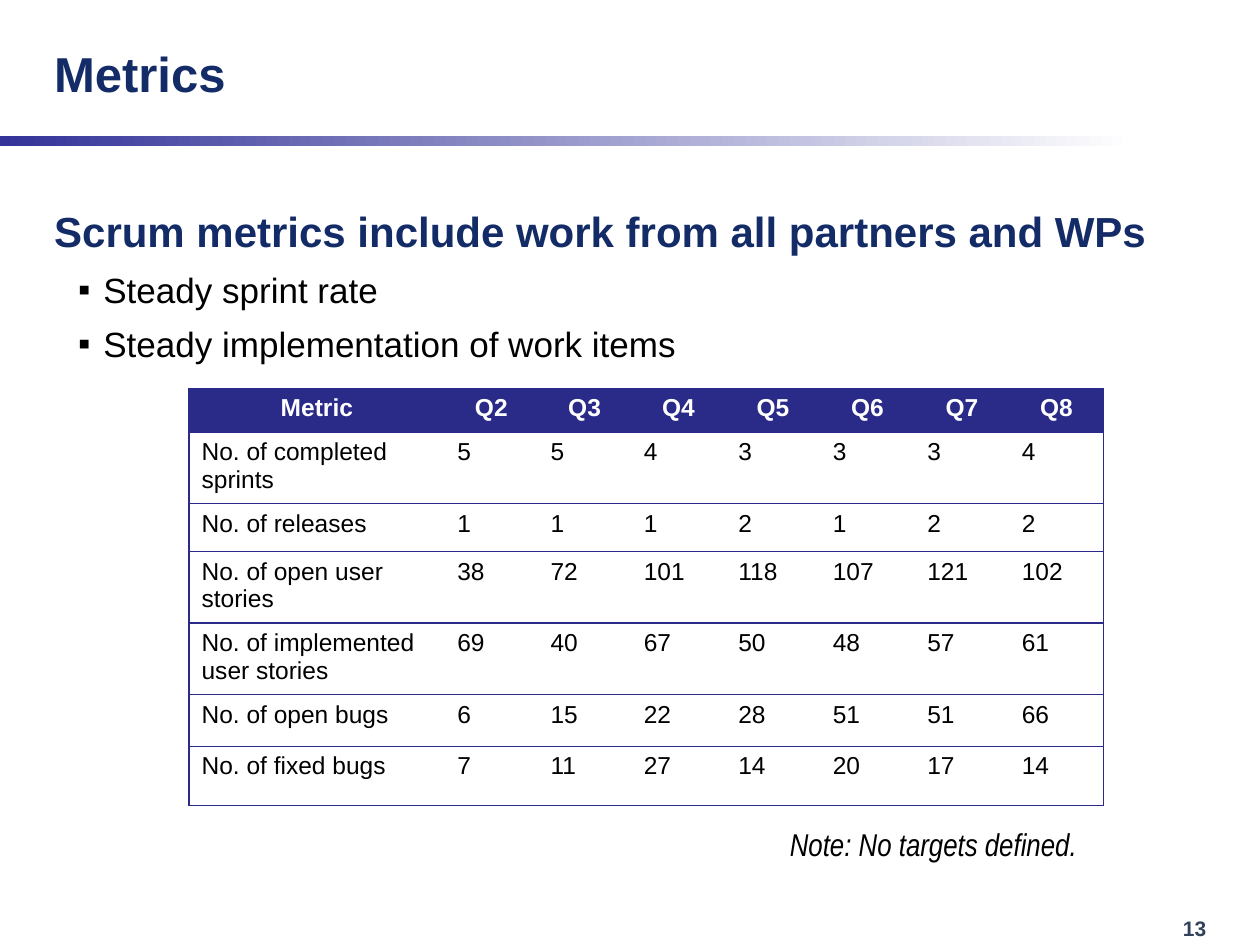
from pptx import Presentation
from pptx.dml.color import RGBColor
from pptx.enum.shapes import MSO_SHAPE as Shape
from pptx.enum.text import MSO_ANCHOR as Anchor, MSO_AUTO_SIZE as AutoSize, PP_ALIGN as Align
from pptx.oxml import parse_xml
from pptx.oxml.ns import nsdecls
from pptx.util import Inches, Pt

NAVY, INDIGO, BLACK, WHITE = "132B66", "2A2A89", "000000", "FFFFFF"
PLAIN_TABLE_STYLE = "{2D5ABB26-0587-4C30-8999-92F81FD0307C}"

HEADER = ["Metric", "Q2", "Q3", "Q4", "Q5", "Q6", "Q7", "Q8"]
METRICS = [
    ("No. of completed sprints", 5, 5, 4, 3, 3, 3, 4),
    ("No. of releases", 1, 1, 1, 2, 1, 2, 2),
    ("No. of open user stories", 38, 72, 101, 118, 107, 121, 102),
    ("No. of implemented user stories", 69, 40, 67, 50, 48, 57, 61),
    ("No. of open bugs", 6, 15, 22, 28, 51, 51, 66),
    ("No. of fixed bugs", 7, 11, 27, 14, 20, 17, 14),
]
COLUMN_WIDTHS = [2.03, 0.74, 0.74] + [0.75] * 5
ROW_HEIGHTS = [0.35, 0.41, 0.38, 0.44, 0.41, 0.41, 0.47]


def color(hex_string):
    return RGBColor.from_string(hex_string)


def box(left, top, width, height):
    return [Inches(value) for value in (left, top, width, height)]


class SlideBuilder:
    def __init__(self, slide, font="Arial"):
        self.slide = slide
        self.font = font

    def format_paragraph(self, paragraph, size, hex_string, bold=False, italic=False, font=None):
        for run in paragraph.runs:
            run.font.name = font or self.font
            run.font.size = Pt(size)
            run.font.bold = bold
            run.font.italic = italic
            run.font.color.rgb = color(hex_string)

    def place(self, shape, position):
        shape.left, shape.top, shape.width, shape.height = box(*position)
        shape.text_frame.auto_size = AutoSize.NONE

    def title(self, text, position):
        shape = self.slide.shapes.title
        self.place(shape, position)
        shape.text_frame.text = text
        shape.text_frame.vertical_anchor = Anchor.MIDDLE
        paragraph = shape.text_frame.paragraphs[0]
        paragraph.alignment = Align.LEFT
        self.format_paragraph(paragraph, 28, NAVY, bold=True)

    def body(self, heading, items, position):
        shape = self.slide.placeholders[1]
        self.place(shape, position)
        frame = shape.text_frame
        frame.text = "\n".join([heading, *items])
        first, *rest = frame.paragraphs
        self.bullet(first, 0.38, -0.38)
        first.space_before = Pt(0)
        self.format_paragraph(first, 24, NAVY, bold=True)
        for paragraph in rest:
            paragraph.level = 1
            self.bullet(paragraph, 0.39, -0.2, "▪")
            paragraph.space_before = Pt(7)
            self.format_paragraph(paragraph, 20, BLACK)

    def bullet(self, paragraph, margin, indent, character=None):
        properties = paragraph._p.get_or_add_pPr()
        properties.set("marL", str(Inches(margin)))
        properties.set("indent", str(Inches(indent)))
        tag = f'buChar char="{character}"' if character else "buNone"
        name = tag.split()[0]
        properties.append(parse_xml(f'<a:{tag} {nsdecls("a")}></a:{name}>'))

    def gradient_bar(self, position, start, end):
        shape = self.slide.shapes.add_shape(Shape.RECTANGLE, *box(*position))
        shape.shadow.inherit = False
        shape.line.fill.background()
        shape.fill.gradient()
        shape.fill.gradient_angle = 0
        for stop, (offset, hex_string) in zip(shape.fill.gradient_stops, (start, end)):
            stop.position = offset
            stop.color.rgb = color(hex_string)

    def text(self, text, position, size, hex_string, **style):
        shape = self.slide.shapes.add_textbox(*box(*position))
        shape.text_frame.word_wrap = True
        shape.text_frame.text = text
        self.format_paragraph(shape.text_frame.paragraphs[0], size, hex_string, **style)

    def table(self, rows, position, widths, heights):
        frame = self.slide.shapes.add_table(len(rows), len(widths), *box(*position))
        table = frame.table
        table.horz_banding = False
        table._tbl.tblPr.find("{*}tableStyleId").text = PLAIN_TABLE_STYLE
        for column, width in zip(table.columns, widths):
            column.width = Inches(width)
        for row, height in zip(table.rows, heights):
            row.height = Inches(height)
        for row_index, values in enumerate(rows):
            for column_index, value in enumerate(values):
                sides = ["T", "B"]
                if column_index == 0:
                    sides.insert(0, "L")
                if column_index == len(widths) - 1:
                    sides.insert(0, "R")
                self.cell(table.cell(row_index, column_index), value, row_index == 0, sides)

    def cell(self, cell, value, is_header, sides):
        cell.text_frame.text = str(value)
        paragraph = cell.text_frame.paragraphs[0]
        paragraph.alignment = Align.CENTER if is_header else Align.LEFT
        self.format_paragraph(paragraph, 14, WHITE if is_header else BLACK, bold=is_header)
        properties = cell._tc.get_or_add_tcPr()
        for side in sides:
            properties.append(parse_xml(
                f'<a:ln{side} {nsdecls("a")} w="{Pt(0.75)}"><a:solidFill>'
                f'<a:srgbClr val="{INDIGO}"/></a:solidFill></a:ln{side}>'))
        cell.fill.solid()
        cell.fill.fore_color.rgb = color(INDIGO if is_header else WHITE)


def main():
    presentation = Presentation()
    presentation.slide_width, presentation.slide_height = Inches(10), Inches(7.5)
    builder = SlideBuilder(presentation.slides.add_slide(presentation.slide_layouts[1]))

    # Page number and rule under the title
    builder.text("13", (9.29, 7.22, 0.64, 0.3), 12, "32425D", bold=True)
    builder.gradient_bar((0, 1.08, 10, 0.08), (0, "333399"), (0.9, WHITE))

    # Title and key points
    builder.title("Metrics", (0.33, 0.08, 7.08, 1))
    builder.body("Scrum metrics include work from all partners and WPs",
                 ["Steady sprint rate", "Steady implementation of work items"],
                 (0.33, 1.58, 9.33, 5.58))

    # Quarterly metrics and note
    builder.table([HEADER, *METRICS], (1.5, 3.08, 7.25, 3.32), COLUMN_WIDTHS, ROW_HEIGHTS)
    builder.text("Note: No targets defined.", (6.17, 6.5, 2.58, 0.4), 18, BLACK,
                 italic=True, font="Arial Narrow")

    presentation.save("out.pptx")


if __name__ == "__main__":
    main()
